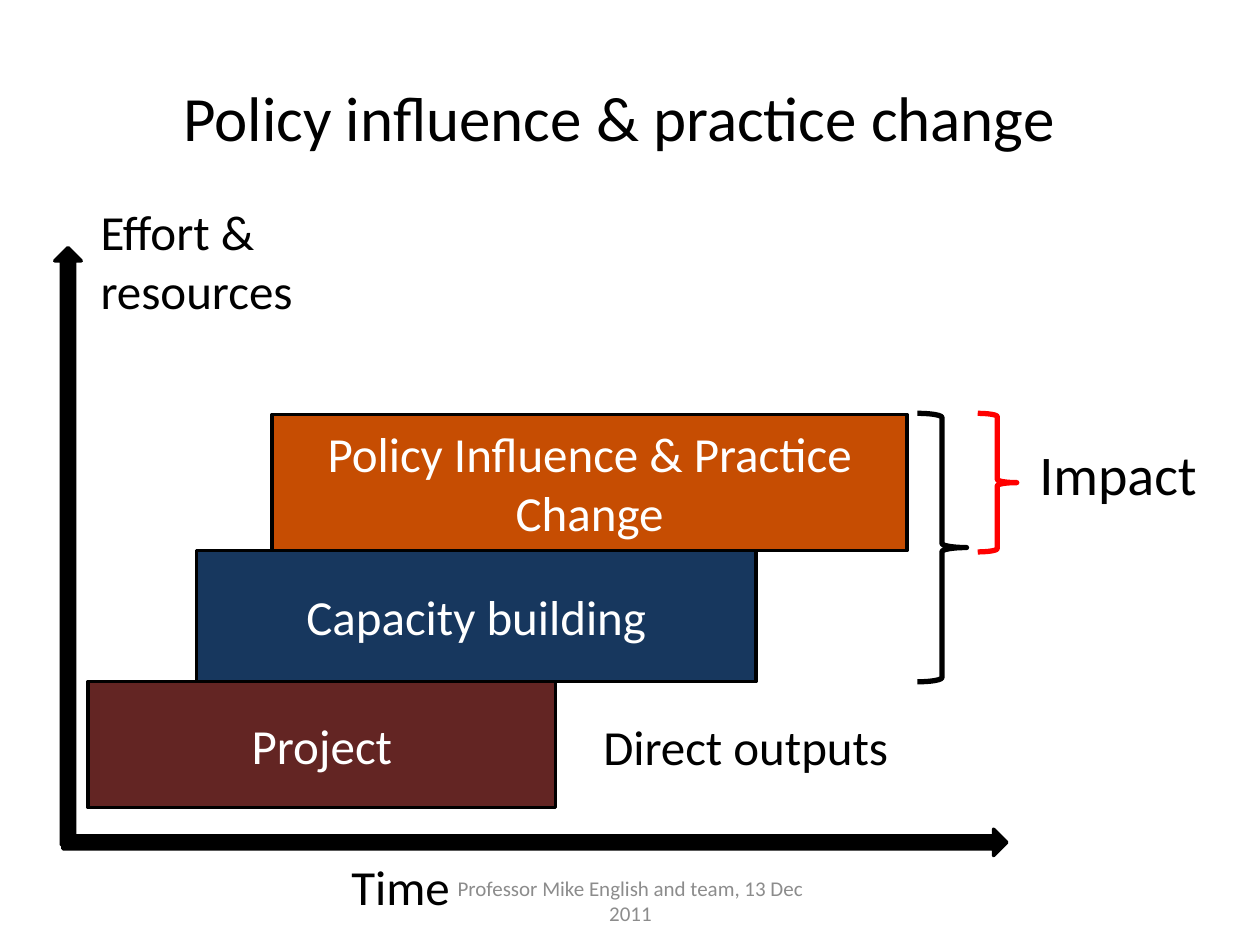
from pptx import Presentation
from pptx.dml.color import RGBColor
from pptx.enum.shapes import MSO_SHAPE
from pptx.enum.text import MSO_ANCHOR, PP_ALIGN
from pptx.util import Pt

RECTANGLE = MSO_SHAPE.RECTANGLE
RIGHT_ARROW = MSO_SHAPE.RIGHT_ARROW
RIGHT_BRACE = MSO_SHAPE.RIGHT_BRACE
TOP, MIDDLE = MSO_ANCHOR.TOP, MSO_ANCHOR.MIDDLE
LEFT, CENTER = PP_ALIGN.LEFT, PP_ALIGN.CENTER


def color(hex_value):
    return RGBColor.from_string(hex_value)


def write(holder, text, size, hex_value, align, anchor):
    frame = holder.text_frame
    frame.word_wrap = True
    frame.vertical_anchor = anchor
    frame.text = text
    paragraph = frame.paragraphs[0]
    paragraph.alignment = align
    font = paragraph.runs[0].font
    font.name = "Calibri"
    font.size = Pt(size)
    font.color.rgb = color(hex_value)


deck = Presentation()
deck.slide_width, deck.slide_height = Pt(720), Pt(540)
slide = deck.slides.add_slide(deck.slide_layouts[6])
shapes = slide.shapes

stages = [
    ("Project", 50.4, 389.5, 267.1, 72, "632523"),
    ("Capacity building", 112.3, 314.6, 319.7, 74.9, "17375E"),
    ("Policy Influence & Practice Change", 155.5, 236.9, 362.9, 77.7, "C64D02"),
]
for name, left, top, width, height, fill in stages:
    stage = shapes.add_shape(RECTANGLE, Pt(left), Pt(top), Pt(width), Pt(height))
    stage.shadow.inherit = False
    stage.fill.solid()
    stage.fill.fore_color.rgb = color(fill)
    stage.line.color.rgb = color("000000")
    stage.line.width = Pt(2)
    write(stage, name, 28, "FFFFFF", CENTER, MIDDLE)

axes = [(36, 473.8, 539.3, 0), (-131.8, 304.6, 341.3, 270)]
for left, top, length, rotation in axes:
    axis = shapes.add_shape(RIGHT_ARROW, Pt(left), Pt(top), Pt(length), Pt(15.1))
    axis.rotation = rotation
    axis.shadow.inherit = False
    axis.fill.solid()
    axis.fill.fore_color.rgb = color("000000")
    axis.line.color.rgb = color("000000")
    axis.line.width = Pt(2)

braces = [(558.7, 22.3, 79.2, "FF0000"), (524.2, 28.1, 153.4, "000000")]
for left, width, height, stroke in braces:
    brace = shapes.add_shape(RIGHT_BRACE, Pt(left), Pt(236.2), Pt(width), Pt(height))
    brace.shadow.inherit = False
    brace.fill.background()
    brace.line.color.rgb = color(stroke)
    brace.line.width = Pt(3)

labels = [
    ("Policy influence & practice change", 36, 21.6, 635.8, 90, 36, "000000", CENTER, MIDDLE),
    ("Effort & resources", 50.4, 111.6, 167, 74.9, 28, "000000", LEFT, TOP),
    ("Time", 193.7, 486, 167, 41, 28, "000000", LEFT, TOP),
    ("Impact", 586.8, 247.7, 108, 46.1, 32, "000000", LEFT, TOP),
    ("Direct outputs", 337.7, 406.1, 203.8, 41, 28, "000000", LEFT, TOP),
    ("Professor Mike English and team, 13 Dec 2011", 246.2, 500.4, 228.2, 28.8, 12, "8C8C8C", CENTER, MIDDLE),
]
for text, left, top, width, height, size, ink, align, anchor in labels:
    label = shapes.add_textbox(Pt(left), Pt(top), Pt(width), Pt(height))
    write(label, text, size, ink, align, anchor)

deck.save("out.pptx")
